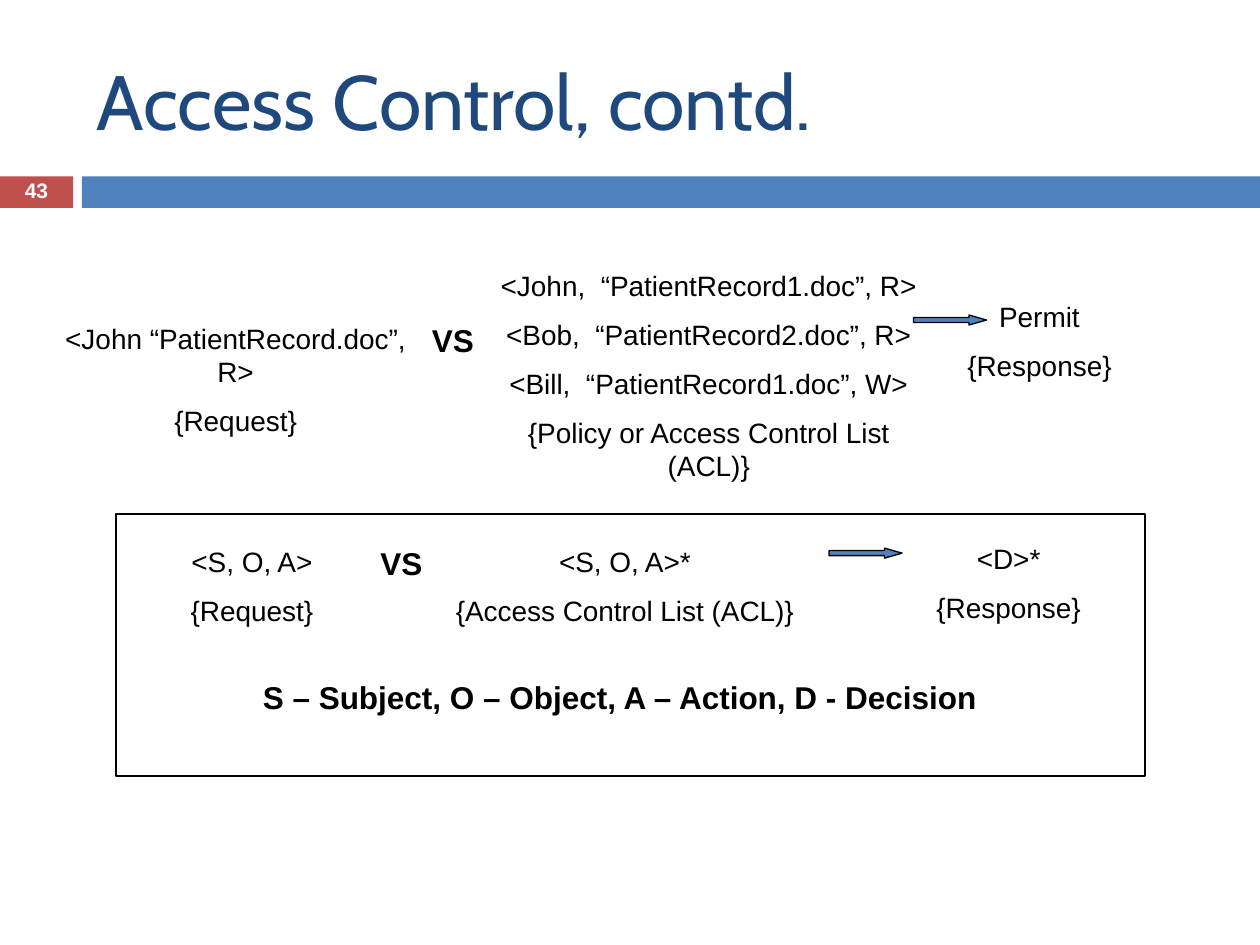
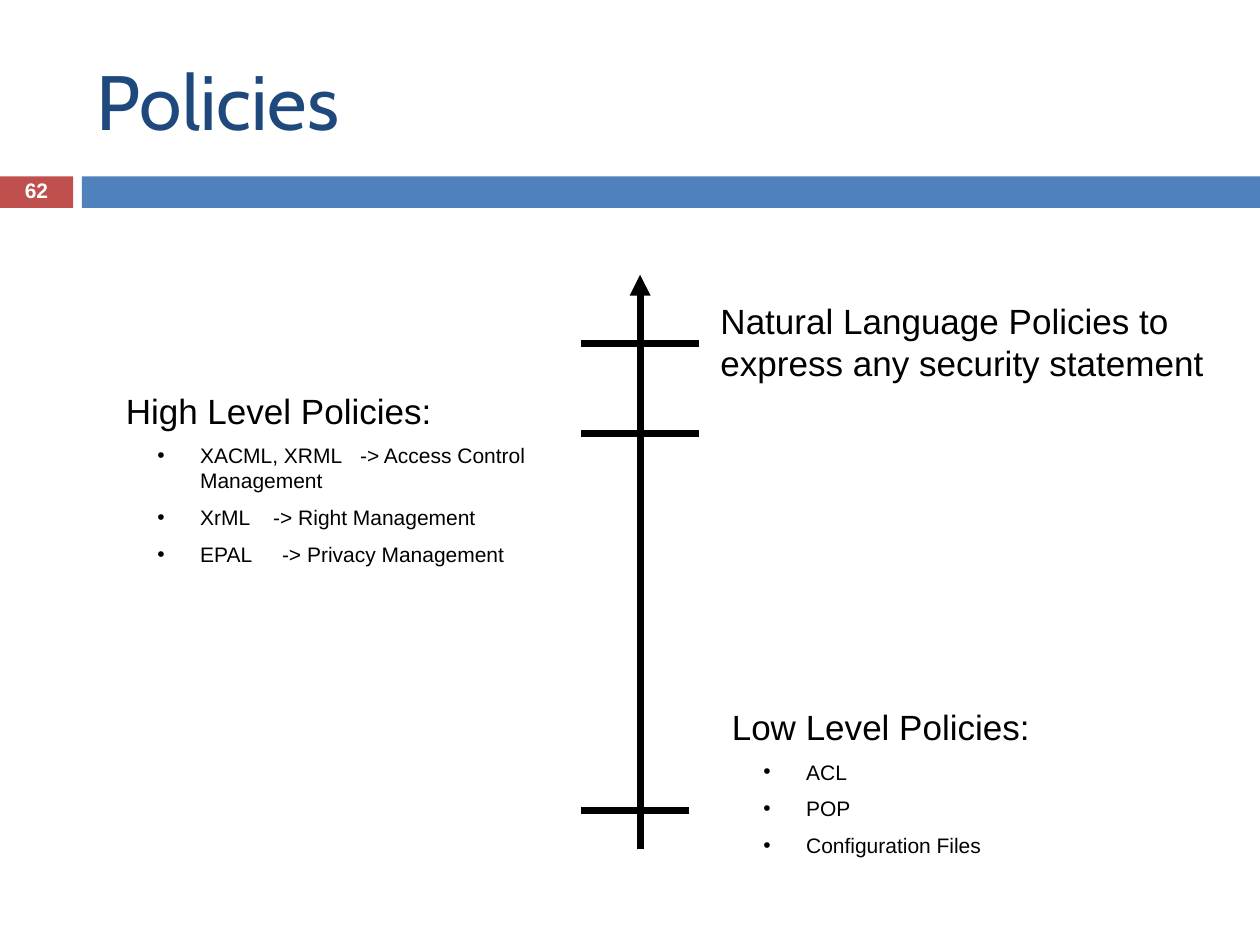
import pptx
import pptx.util
import pptx.dml.color
import pptx.enum.shapes
import pptx.enum.text
import lxml.etree
from pptx.oxml.ns import qn

Inches = pptx.util.Inches
Pt = pptx.util.Pt
Kind = pptx.enum.shapes.MSO_SHAPE
Align = pptx.enum.text.PP_ALIGN
Mid = pptx.enum.text.MSO_ANCHOR.MIDDLE
hues = {"red": "C0504D", "blue": "4F81BD", "navy": "1F497D",
        "black": "000000", "white": "FFFFFF"}
tint = {name: pptx.dml.color.RGBColor.from_string(hue) for name, hue in hues.items()}


def write(text, at, size=16, font="Arial", color="black", bold=False,
          align=Align.LEFT, anchor=None, lead=None, stops=()):
    frame = page.shapes.add_textbox(*map(Inches, at)).text_frame
    frame.word_wrap = True
    if anchor is not None:
        frame.vertical_anchor = anchor
    for i, line in enumerate(text.split("\n")):
        para = frame.paragraphs[0] if i == 0 else frame.add_paragraph()
        level = size
        if i and stops:
            level = 12
            props = para._p.get_or_add_pPr()
            props.set("marL", str(Inches(0.59)))
            props.set("indent", str(Inches(-0.34)))
            lxml.etree.SubElement(props, qn("a:buFont"), typeface="Arial")
            lxml.etree.SubElement(props, qn("a:buChar"), char="•")
            if stops[i - 1]:
                tabs = lxml.etree.SubElement(props, qn("a:tabLst"))
                lxml.etree.SubElement(tabs, qn("a:tab"), pos=str(Inches(stops[i - 1])), algn="l")
        para.alignment = align
        if lead:
            para.line_spacing = lead
        if i:
            para.space_before = Pt(level * 0.55)
        run = para.add_run()
        run.text = line
        run.font.size = Pt(level)
        run.font.name = font
        run.font.bold = bold
        run.font.color.rgb = tint[color]


def draw(kind, at, fill, edge=None):
    shape = page.shapes.add_shape(kind, *map(Inches, at))
    shape.shadow.inherit = False
    shape.fill.solid()
    shape.fill.fore_color.rgb = tint[fill]
    if edge:
        shape.line.color.rgb = tint["black"]
        shape.line.width = Pt(edge)
    else:
        shape.line.fill.background()
    return shape


deck = pptx.Presentation()
deck.slide_width = Inches(10)
deck.slide_height = Inches(7.5)
pages = []
for title, number in [("Access Control, contd.", "43"), ("Policies", "62")]:
    page = deck.slides.add_slide(deck.slide_layouts[6])
    pages.append(page)
    draw(Kind.RECTANGLE, (0, 1.4, 0.58, 0.25), "red")
    draw(Kind.RECTANGLE, (0.65, 1.4, 9.35, 0.25), "blue")
    write(title, (0.67, 0.25, 8.92, 1.08), size=44, font="Cabin", color="navy", anchor=Mid)
    write(number, (0, 1.39, 0.58, 0.27), size=12, color="white", bold=True,
          align=Align.CENTER, anchor=Mid, lead=0.8)

page = pages[0]
draw(Kind.RECTANGLE, (0.92, 4.08, 8.17, 2.08), "white", 1)
for text, at in [
    ("<John “PatientRecord.doc”, R>\n{Request}", (0.33, 2.5, 3.08, 0.77)),
    ("<John,  “PatientRecord1.doc”, R>\n<Bob,  “PatientRecord2.doc”, R>\n"
     "<Bill,  “PatientRecord1.doc”, W>\n{Policy or Access Control List (ACL)}",
     (3.75, 2.08, 3.75, 1.57)),
    ("Permit\n{Response}", (7.25, 2.33, 2, 0.77)),
    ("<S, O, A>\n{Request}", (1, 4.27, 2, 0.77)),
    ("<S, O, A>*\n{Access Control List (ACL)}", (3.42, 4.27, 3.08, 0.77)),
    ("<D>*\n{Response}", (6.92, 4.25, 2.17, 0.77)),
]:
    write(text, at, align=Align.CENTER)
for left, top in [(3.33, 2.5), (2.92, 4.27)]:
    write("VS", (left, top, 0.67, 0.4), size=18, bold=True)
for left, top in [(7.25, 2.5), (6.58, 4.35)]:
    arrow = draw(Kind.RIGHT_ARROW, (left, top, 0.58, 0.08), "blue", 0.75)
    arrow.adjustments[0] = 0.5
    arrow.adjustments[1] = 1.75
write("S – Subject, O – Object, A – Action, D - Decision", (1.42, 5.33, 7, 0.4),
      size=18, bold=True, align=Align.CENTER)

page = pages[1]
axis = (5.08, 6.74, 5.08, 2.18)
ticks = [(4.61, 2.73, 5.55, 2.73), (4.61, 3.44, 5.55, 3.44), (4.61, 6.43, 5.47, 6.43)]
for ends in [axis] + ticks:
    line = page.shapes.add_connector(pptx.enum.shapes.MSO_CONNECTOR.STRAIGHT, *map(Inches, ends))
    line.line.color.rgb = tint["black"]
    line.line.width = Pt(4)
    if ends == axis:
        lxml.etree.SubElement(line.line._get_or_add_ln(), qn("a:tailEnd"), type="triangle")
    lxml.etree.SubElement(line._element.spPr, qn("a:effectLst"))
write("High Level Policies:\nXACML, XRML\t-> Access Control Management\n"
      "XrML\t-> Right Management\nEPAL\t-> Privacy Management",
      (0.9, 3.04, 3.54, 1.53), size=20, stops=(1.86, 1.17, 1.24))
write("Low Level Policies:\nACL\nPOP\nConfiguration Files",
      (5.71, 5.55, 3.94, 1.34), size=20, stops=(0, 0, 0))
write("Natural Language Policies to express any security statement",
      (5.62, 2.33, 4.14, 0.77), size=20)

deck.save("out.pptx")
